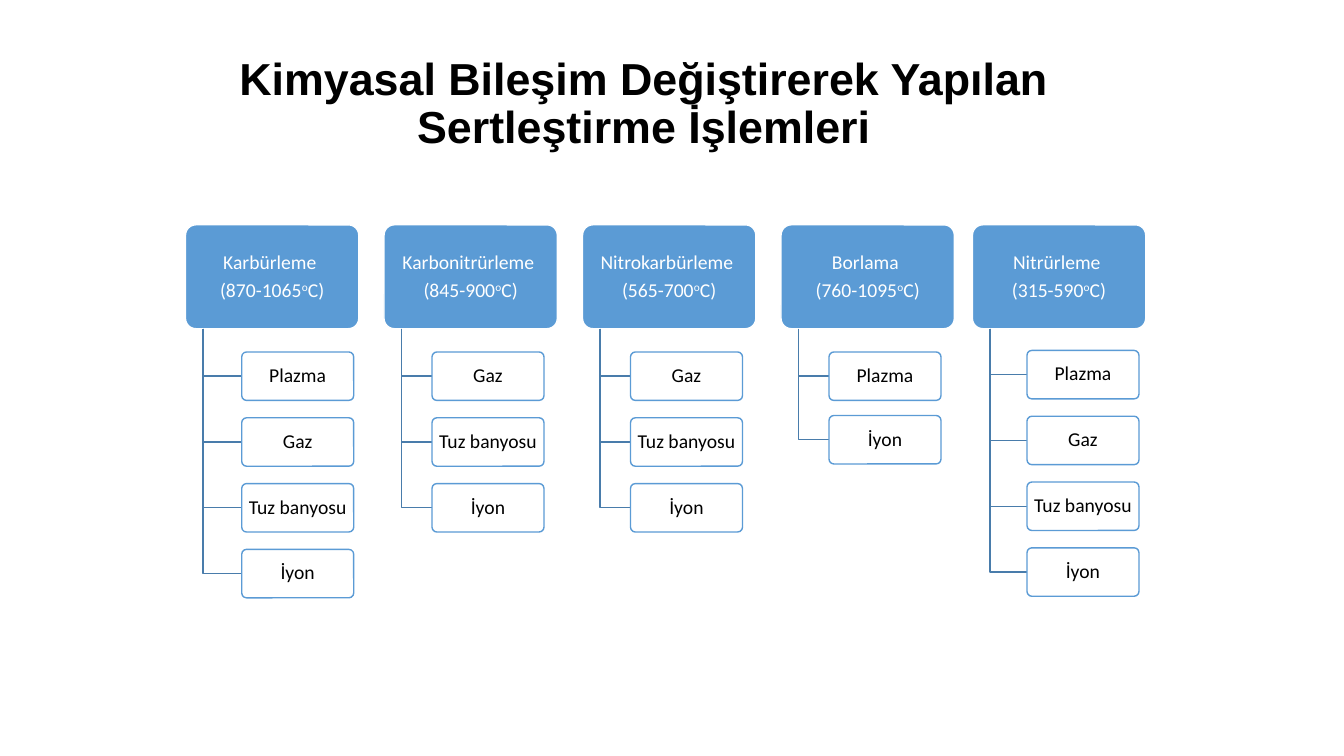
import pptx
import pptx.dml.color
import pptx.enum.shapes
import pptx.enum.text
import pptx.oxml.ns
import pptx.util
from lxml import etree

Pt = pptx.util.Pt
RGBColor = pptx.dml.color.RGBColor
ANCHOR = pptx.enum.text.MSO_ANCHOR

BLUE = RGBColor(0x5B, 0x9B, 0xD5)
LINE_BLUE = RGBColor(0x49, 0x7C, 0xAB)
WHITE = RGBColor(0xFF, 0xFF, 0xFF)
BLACK = RGBColor(0x00, 0x00, 0x00)

TITLE = "Kimyasal Bileşim Değiştirerek Yapılan Sertleştirme İşlemleri"

HEADER_TOP, HEADER_WIDTH, HEADER_HEIGHT = 160.6, 123.8, 74.2
TRUNK_INDENT = 12.6
METHOD_WIDTH, METHOD_HEIGHT = 80, 34.6

# name, temperature range, left, method indent, first method top, method pitch, methods
PROCESSES = [
    ("Karbürleme ", "870-1065", 132.5, 40.2, 251.4, 47,
     ["Plazma", "Gaz", "Tuz banyosu", "İyon"]),
    ("Karbonitrürleme ", "845-900", 274.3, 34.3, 251.4, 47,
     ["Gaz", "Tuz banyosu", "İyon"]),
    ("Nitrokarbürleme ", "565-700", 416.1, 34.3, 251.4, 47,
     ["Gaz", "Tuz banyosu", "İyon"]),
    ("Borlama ", "760-1095", 557.9, 34.3, 251.4, 45.4,
     ["Plazma", "İyon"]),
    ("Nitrürleme ", "315-590", 694.6, 39, 250.3, 47,
     ["Plazma", "Gaz", "Tuz banyosu", "İyon"]),
]


def add_run(paragraph, text, size, font_name, color, bold=False, superscript=False):
    run = paragraph.add_run()
    run.text = text
    run.font.size = Pt(size)
    run.font.name = font_name
    run.font.color.rgb = color
    run.font.bold = bold
    if superscript:
        run._r.get_or_add_rPr().set("baseline", "30000")


def add_title(slide, left, top, width, height):
    box = slide.shapes.add_textbox(Pt(left), Pt(top), Pt(width), Pt(height))
    frame = box.text_frame
    frame.word_wrap = True
    frame.vertical_anchor = ANCHOR.BOTTOM
    paragraph = frame.paragraphs[0]
    paragraph.alignment = pptx.enum.text.PP_ALIGN.CENTER
    paragraph.line_spacing = 0.9
    add_run(paragraph, TITLE, 32, "Arial", BLACK, bold=True)


def add_card(shapes, left, top, width, height, fill, line, text_color, lines):
    """Add a rounded box; each line is a list of (text, superscript) pieces."""
    card = shapes.add_shape(pptx.enum.shapes.MSO_SHAPE.ROUNDED_RECTANGLE,
                            Pt(left), Pt(top), Pt(width), Pt(height))
    card.adjustments[0] = 0.1
    card.shadow.inherit = False
    card.fill.solid()
    card.fill.fore_color.rgb = fill
    card.line.color.rgb = line
    card.line.width = Pt(1)
    frame = card.text_frame
    frame.word_wrap = True
    frame.vertical_anchor = ANCHOR.MIDDLE
    frame.margin_left = frame.margin_right = Pt(3)
    frame.margin_top = frame.margin_bottom = Pt(2)
    for index, pieces in enumerate(lines):
        paragraph = frame.add_paragraph() if index else frame.paragraphs[0]
        paragraph.alignment = pptx.enum.text.PP_ALIGN.CENTER
        paragraph.line_spacing = 0.9
        paragraph.space_after = Pt(5)
        for text, superscript in pieces:
            add_run(paragraph, text, 14, "Calibri", text_color, superscript=superscript)
    return card


def set_opacity(shape, percent):
    color = shape.fill._xPr.find(".//" + pptx.oxml.ns.qn("a:srgbClr"))
    alpha = etree.SubElement(color, pptx.oxml.ns.qn("a:alpha"))
    alpha.set("val", str(percent * 1000))


def add_branch(shapes, left, top, right, bottom):
    """Draw an L-shaped line down from the header and across to a method."""
    builder = shapes.build_freeform(Pt(left), Pt(top))
    builder.add_line_segments([(Pt(left), Pt(bottom)), (Pt(right), Pt(bottom))], close=False)
    branch = builder.convert_to_shape()
    branch.shadow.inherit = False
    branch.fill.background()
    branch.line.color.rgb = LINE_BLUE
    branch.line.width = Pt(1)


def add_process(shapes, name, temperatures, left, indent, first_top, pitch, methods):
    heading = [[(name, False)],
               [("(" + temperatures, False), ("o", True), ("C)", False)]]
    add_card(shapes, left, HEADER_TOP, HEADER_WIDTH, HEADER_HEIGHT,
             BLUE, WHITE, WHITE, heading)
    for index, method in enumerate(methods):
        top = first_top + index * pitch
        add_branch(shapes, left + TRUNK_INDENT, HEADER_TOP + HEADER_HEIGHT,
                   left + indent, top + METHOD_HEIGHT / 2)
        card = add_card(shapes, left + indent, top, METHOD_WIDTH, METHOD_HEIGHT,
                        WHITE, BLUE, BLACK, [[(method, False)]])
        set_opacity(card, 90)


def main():
    presentation = pptx.Presentation()
    presentation.slide_width = Pt(960)
    presentation.slide_height = Pt(540)
    slide = presentation.slides.add_slide(presentation.slide_layouts[6])
    add_title(slide, 156.2, 24.5, 607.7, 88.6)
    diagram = slide.shapes.add_group_shape()
    for process in PROCESSES:
        add_process(diagram.shapes, *process)
    presentation.save("out.pptx")


if __name__ == "__main__":
    main()
